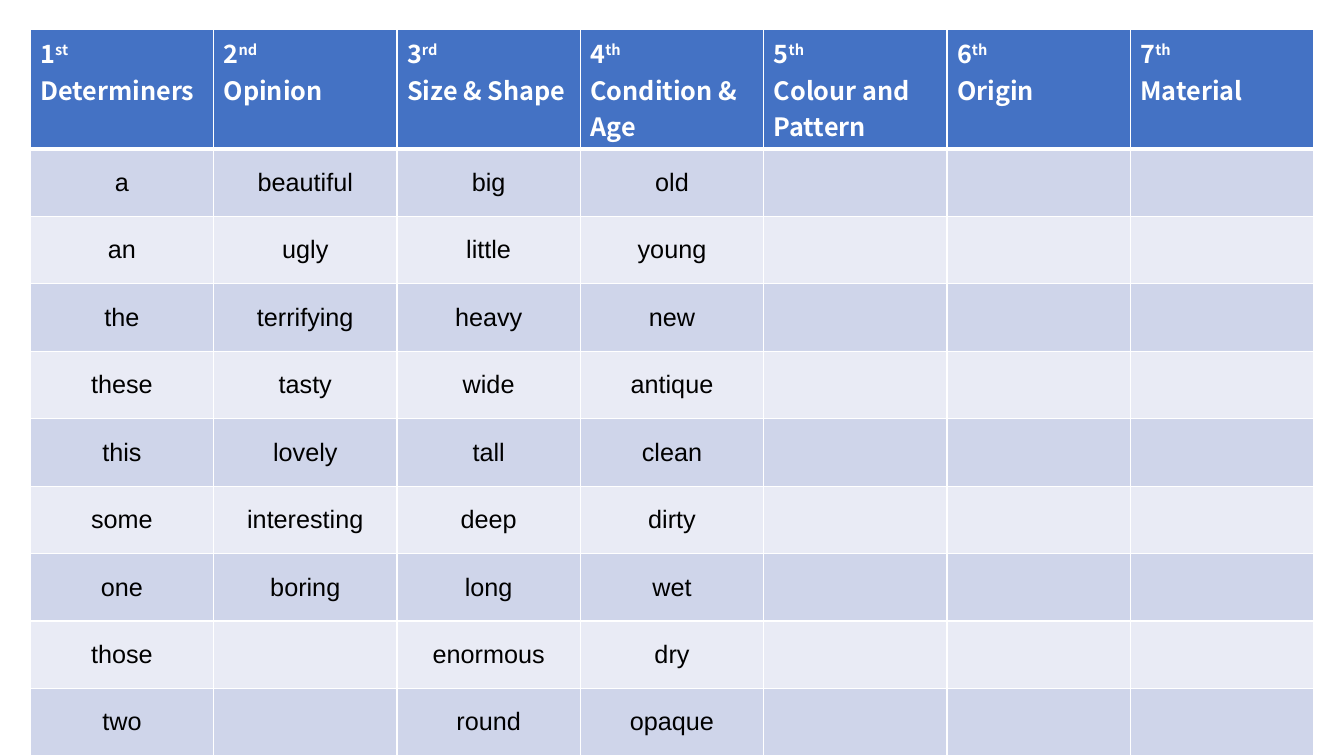
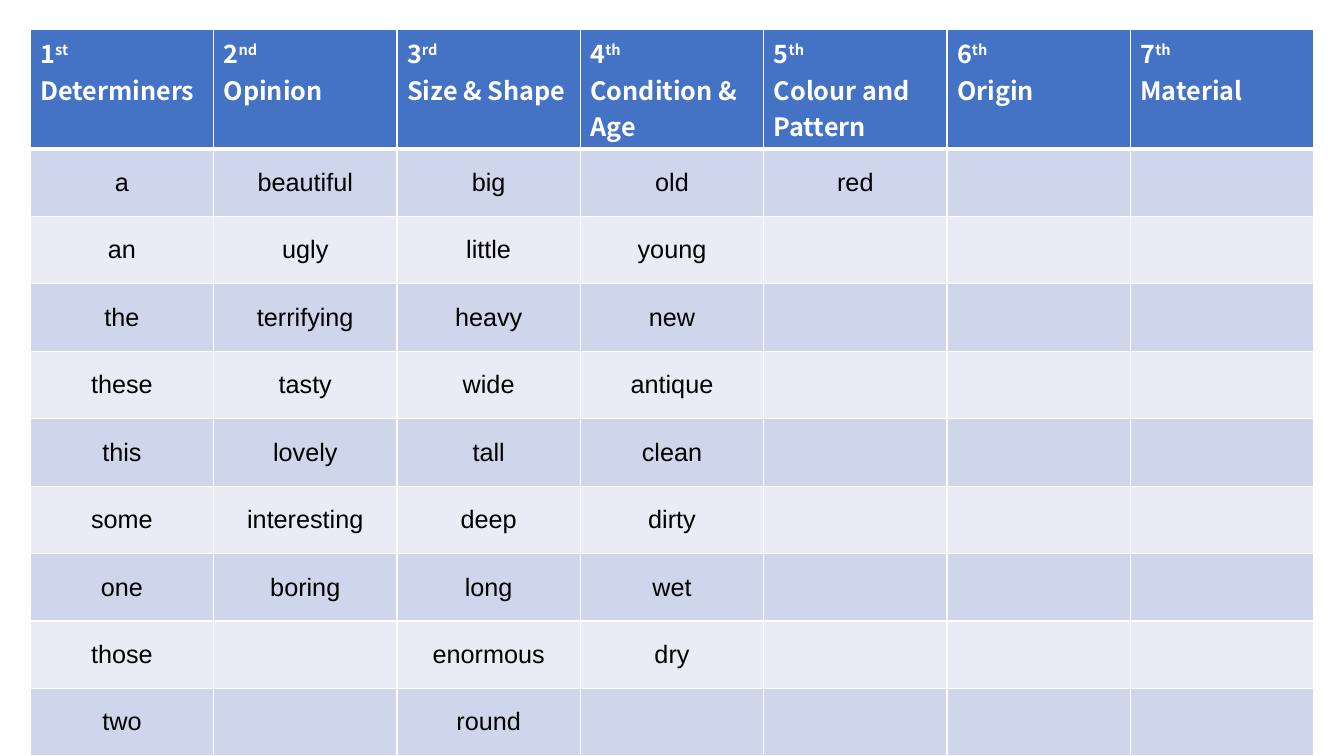
from dataclasses import dataclass

from lxml.etree import SubElement
from pptx import Presentation
from pptx.dml.color import RGBColor as RGB
from pptx.enum.text import MSO_ANCHOR as Anchor, PP_ALIGN as Align
from pptx.oxml.ns import qn
from pptx.util import Inches, Pt

BLANK_LAYOUT = 6
BODY_ROWS = 9
HEADER_SHARE = 1.42  # header height, in body rows

HEADINGS = [
    ("1", "st", "Determiners"),
    ("2", "nd", "Opinion"),
    ("3", "rd", "Size & Shape"),
    ("4", "th", "Condition & Age"),
    ("5", "th", "Colour and Pattern"),
    ("6", "th", "Origin"),
    ("7", "th", "Material"),
]
DETERMINERS = ["a", "an", "the", "these", "this", "some", "one", "those", "two"]
OPINIONS = ["beautiful", "ugly", "terrifying", "tasty", "lovely", "interesting", "boring"]
SIZES = ["big", "little", "heavy", "wide", "tall", "deep", "long", "enormous", "round"]
CONDITIONS = ["old", "young", "new", "antique", "clean", "dirty", "wet", "dry"]

# One entry per slide: the word list of each column, left to right
WORD_CHARTS = [
    [DETERMINERS, OPINIONS, SIZES, CONDITIONS + ["opaque"], [], [], []],
    [DETERMINERS, OPINIONS, SIZES, CONDITIONS, ["red"], [], []],
]


@dataclass(frozen=True)
class Theme:
    header_fill: str = "4472C4"
    bands: tuple = ("CFD5EA", "E9EBF5")
    rule: str = "FFFFFF"
    thin: float = 1
    thick: float = 3
    header_text: str = "FFFFFF"
    body_text: str = "000000"
    header_font: str = "Noto Sans CJK JP"
    body_font: str = "Arial"
    text_size: int = 18

    def header_format(self):
        return {"name": self.header_font, "size": Pt(self.text_size),
                "bold": True, "color": self.header_text}

    def body_format(self):
        return {"name": self.body_font, "size": Pt(self.text_size),
                "bold": False, "color": self.body_text}


class Deck:
    def __init__(self, theme):
        self.theme = theme
        self.prs = Presentation()
        self.prs.slide_width, self.prs.slide_height = Inches(13.33), Inches(7.5)
        self.slide = None

    def new_slide(self):
        self.slide = self.prs.slides.add_slide(self.prs.slide_layouts[BLANK_LAYOUT])

    def word_table(self, headings, word_lists):
        width, height = self.prs.slide_width, self.prs.slide_height
        left, top = int(width * 0.0225), int(height * 0.0387)
        table_width, table_height = width - 2 * left, int(height * 0.93)
        row_height = int(table_height / (BODY_ROWS + HEADER_SHARE))
        table = self.slide.shapes.add_table(
            BODY_ROWS + 1, len(headings), left, top, table_width, table_height).table
        for column in table.columns:
            column.width = table_width // len(headings)
        for row in table.rows:
            row.height = row_height
        table.rows[0].height = int(row_height * HEADER_SHARE)

        for col, (heading, words) in enumerate(zip(headings, word_lists)):
            self.header_cell(table.cell(0, col), *heading)
            for row in range(BODY_ROWS):
                word = words[row] if row < len(words) else ""
                self.word_cell(table.cell(row + 1, col), word, row)

    def header_cell(self, cell, number, suffix, label):
        self.paint(cell, self.theme.header_fill, bottom=self.theme.thick)
        ordinal = cell.text_frame.paragraphs[0]
        category = cell.text_frame.add_paragraph()
        style = self.theme.header_format()
        self.add_run(ordinal, number, style)
        raised = self.add_run(ordinal, suffix, style)
        raised.font._element.set("baseline", "30000")
        self.add_run(category, label, style)

    def word_cell(self, cell, word, row):
        theme = self.theme
        self.paint(cell, theme.bands[row % len(theme.bands)],
                   top=theme.thin if row else theme.thick)
        cell.vertical_anchor = Anchor.MIDDLE
        if word:
            paragraph = cell.text_frame.paragraphs[0]
            paragraph.alignment = Align.CENTER
            self.add_run(paragraph, word, theme.body_format())

    def add_run(self, paragraph, text, style):
        run = paragraph.add_run()
        run.text = text
        for key, value in style.items():
            if key == "color":
                run.font.color.rgb = RGB.from_string(value)
            else:
                setattr(run.font, key, value)
        return run

    def paint(self, cell, fill, top=None, bottom=None):
        """Rule all four sides, then fill: the schema wants borders first."""
        thin = self.theme.thin
        sides = {"L": thin, "R": thin, "T": top or thin, "B": bottom or thin}
        properties = cell._tc.get_or_add_tcPr()
        for side, points in sides.items():
            line = SubElement(properties, qn(f"a:ln{side}"), w=str(Pt(points)))
            solid = SubElement(line, qn("a:solidFill"))
            SubElement(solid, qn("a:srgbClr"), val=self.theme.rule)
        cell.fill.solid()
        cell.fill.fore_color.rgb = RGB.from_string(fill)


def main():
    deck = Deck(Theme())
    for word_lists in WORD_CHARTS:
        deck.new_slide()
        deck.word_table(HEADINGS, word_lists)
    deck.prs.save("out.pptx")


if __name__ == "__main__":
    main()
